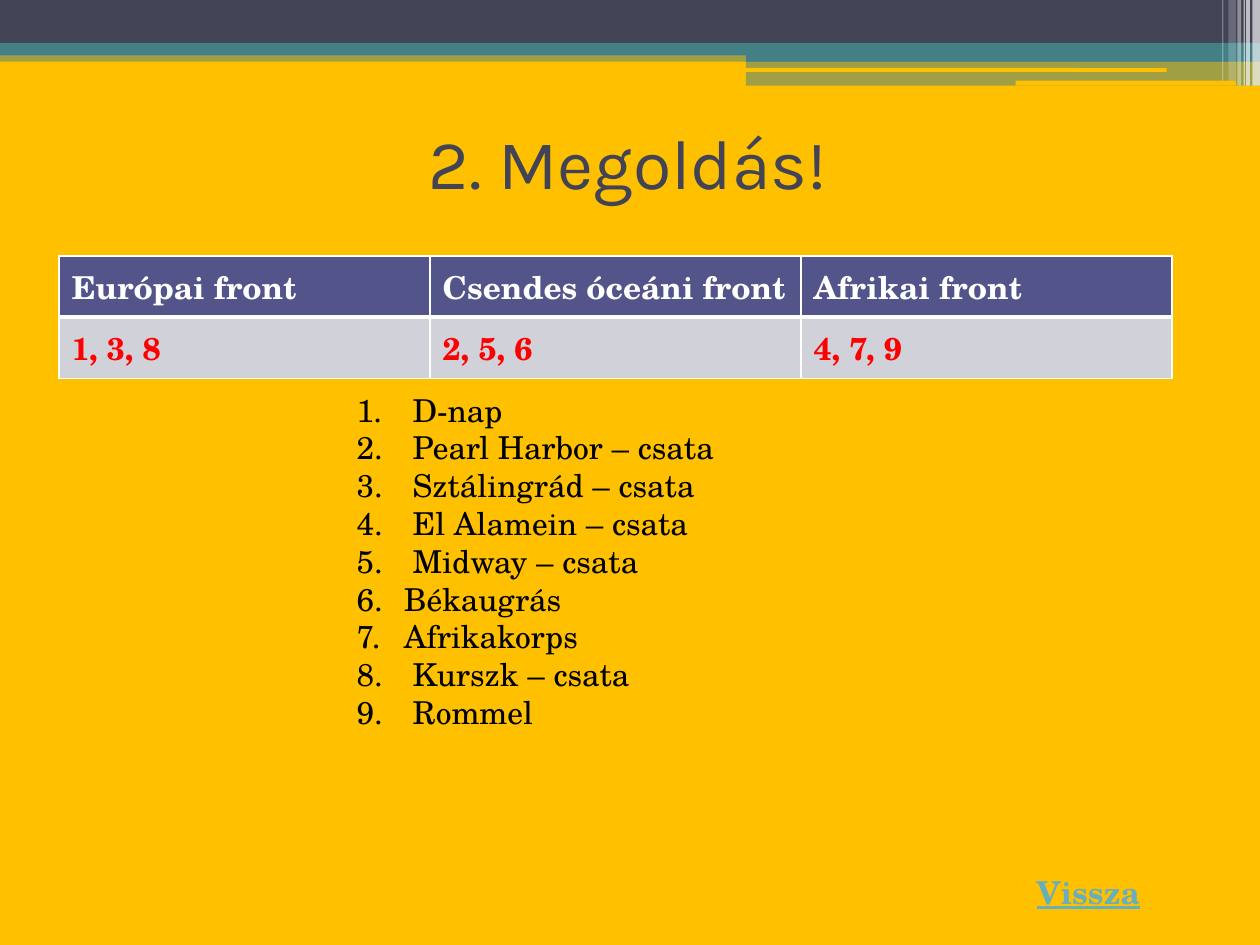
from lxml.etree import SubElement
from pptx import Presentation
from pptx.dml.color import RGBColor
from pptx.enum.shapes import MSO_SHAPE as Preset
from pptx.enum.text import MSO_ANCHOR as Anchor, MSO_AUTO_SIZE as AutoSize, PP_ALIGN as Align
from pptx.oxml.ns import qn
from pptx.util import Inches, Pt

AMBER = RGBColor(0xFF, 0xC0, 0x00)
SLATE = RGBColor(0x42, 0x44, 0x56)
TEAL = RGBColor(0x43, 0x80, 0x86)
WHITE = RGBColor(0xFF, 0xFF, 0xFF)
BLACK = RGBColor(0x00, 0x00, 0x00)
RED = RGBColor(0xFF, 0x00, 0x00)
INDIGO = RGBColor(0x53, 0x54, 0x8A)
PALE = RGBColor(0xD1, 0xD1, 0xDA)
LINK_BLUE = RGBColor(0x67, 0xAF, 0xBD)
TITLE_FONT, BODY_FONT = "Karla", "TeX Gyre Schola"

presentation = Presentation()
presentation.slide_width, presentation.slide_height = Inches(10), Inches(7.5)
COLUMN = presentation.slide_width / 100
ROW = presentation.slide_height / 75


def grid_box(left, top, width, height):
    """Turn columns and rows of the 100 by 75 grid into slide lengths."""
    return [round(n * unit) for n, unit in
            zip((left, top, width, height), (COLUMN, ROW, COLUMN, ROW))]


def set_font(paragraph, name, size, color, bold=False):
    font = paragraph.font
    font.name, font.size, font.bold = name, Pt(size), bold
    font.color.rgb = color


slide = presentation.slides.add_slide(presentation.slide_layouts[1])
slide.background.fill.solid()
slide.background.fill.fore_color.rgb = AMBER

# Header bands and the light stripes at the right: preset, box, colour, opacity in percent
bands = [
    (Preset.RECTANGLE, (0, 4, 100, 0.9), TEAL, 50),
    (Preset.RECTANGLE, (0, 0, 100, 3.4), SLATE, 100),
    (Preset.RECTANGLE, (0, 3.4, 100, 1), TEAL, 100),
    (Preset.RECTANGLE, (59.2, 3.9, 40.8, 1), TEAL, 100),
    (Preset.RECTANGLE, (59.2, 4.8, 40.8, 2), TEAL, 50),
    (Preset.ROUNDED_RECTANGLE, (59.1, 5.4, 33.5, 0.3), AMBER, 100),
    (Preset.ROUNDED_RECTANGLE, (80.6, 6.4, 17.5, 0.4), AMBER, 100),
]
stripes = [(99.4, 0.6, 6.8, 65), (98.9, 0.3, 6.8, 65), (98.7, 0.1, 6.8, 60),
           (98.2, 0.3, 6.8, 40), (97.5, 0.6, 6.4, 20), (97, 0.1, 6.4, 30)]
bands += [(Preset.RECTANGLE, (left, 0, width, height), WHITE, opacity)
          for left, width, height, opacity in stripes]

for preset, box, color, opacity in bands:
    shape = slide.shapes.add_shape(preset, *grid_box(*box))
    shape.shadow.inherit = False
    shape.line.fill.background()
    shape.fill.solid()
    shape.fill.fore_color.rgb = color
    if opacity < 100:
        color_element = shape._element.spPr.find(qn("a:solidFill"))[0]
        SubElement(color_element, qn("a:alpha"), val=str(opacity * 1000))

# Title
title = slide.shapes.title
title.left, title.top, title.width, title.height = grid_box(5.5, 7, 90, 11.7)
title.text_frame.text = "2. Megoldás! "
title.text_frame.vertical_anchor = Anchor.MIDDLE
title.text_frame.auto_size = AutoSize.NONE
title_paragraph = title.text_frame.paragraphs[0]
title_paragraph.alignment = Align.CENTER
set_font(title_paragraph, TITLE_FONT, 40, SLATE)

# Fronts and the numbers of their events
answers = [("Európai front", "Csendes óceáni front", "Afrikai front"),
           ("1, 3, 8", "2, 5, 6", "4, 7, 9")]
row_styles = [(INDIGO, WHITE, {"L": 1, "R": 1, "T": 1, "B": 3}),
              (PALE, RED, {"L": 1, "R": 1, "T": 3, "B": 1})]
table = slide.shapes.add_table(2, 3, *grid_box(4.7, 20.3, 88.3, 8.1)).table
for row, (texts, (fill, color, borders)) in enumerate(zip(answers, row_styles)):
    for column, text in enumerate(texts):
        cell = table.cell(row, column)
        cell.text = text
        set_font(cell.text_frame.paragraphs[0], BODY_FONT, 18, color, bold=True)
        properties = cell._tc.get_or_add_tcPr()
        for side, width in borders.items():
            line = SubElement(properties, qn(f"a:ln{side}"), w=str(Pt(width)))
            line_fill = SubElement(line, qn("a:solidFill"))
            SubElement(line_fill, qn("a:srgbClr"), val=str(WHITE))
        cell.fill.solid()
        cell.fill.fore_color.rgb = fill

# Numbered events
events = [" D-nap", " Pearl Harbor – csata", " Sztálingrád – csata",
          " El Alamein – csata", " Midway – csata", "Békaugrás",
          "Afrikakorps", " Kurszk – csata", " Rommel"]
body = slide.placeholders[1]
body.left, body.top, body.width, body.height = grid_box(27.3, 30.5, 39.8, 28.3)
body.text_frame.text = "\n".join(events)
body.text_frame.auto_size = AutoSize.NONE
indent = round(3.75 * COLUMN)
for paragraph in body.text_frame.paragraphs:
    set_font(paragraph, BODY_FONT, 18, BLACK)
    paragraph.space_before = Pt(0)
    properties = paragraph._p.get_or_add_pPr()
    properties.set("marL", str(indent))
    properties.set("indent", str(-indent))
    numbering = SubElement(properties, qn("a:buAutoNum"), type="arabicPeriod")
    properties.remove(numbering)
    properties.insert_element_before(numbering, "a:tabLst", "a:defRPr", "a:extLst")
    number_font = SubElement(properties, qn("a:buFont"), typeface=BODY_FONT)
    numbering.addprevious(number_font)

# Way back
back = slide.shapes.add_textbox(*grid_box(81.3, 68.8, 10.3, 4))
back.text_frame.word_wrap = False
back.text_frame.auto_size = AutoSize.SHAPE_TO_FIT_TEXT
back.text_frame.text = "Vissza"
back_paragraph = back.text_frame.paragraphs[0]
set_font(back_paragraph, BODY_FONT, 18, LINK_BLUE, bold=True)
back_paragraph.font.underline = True

presentation.save("out.pptx")
